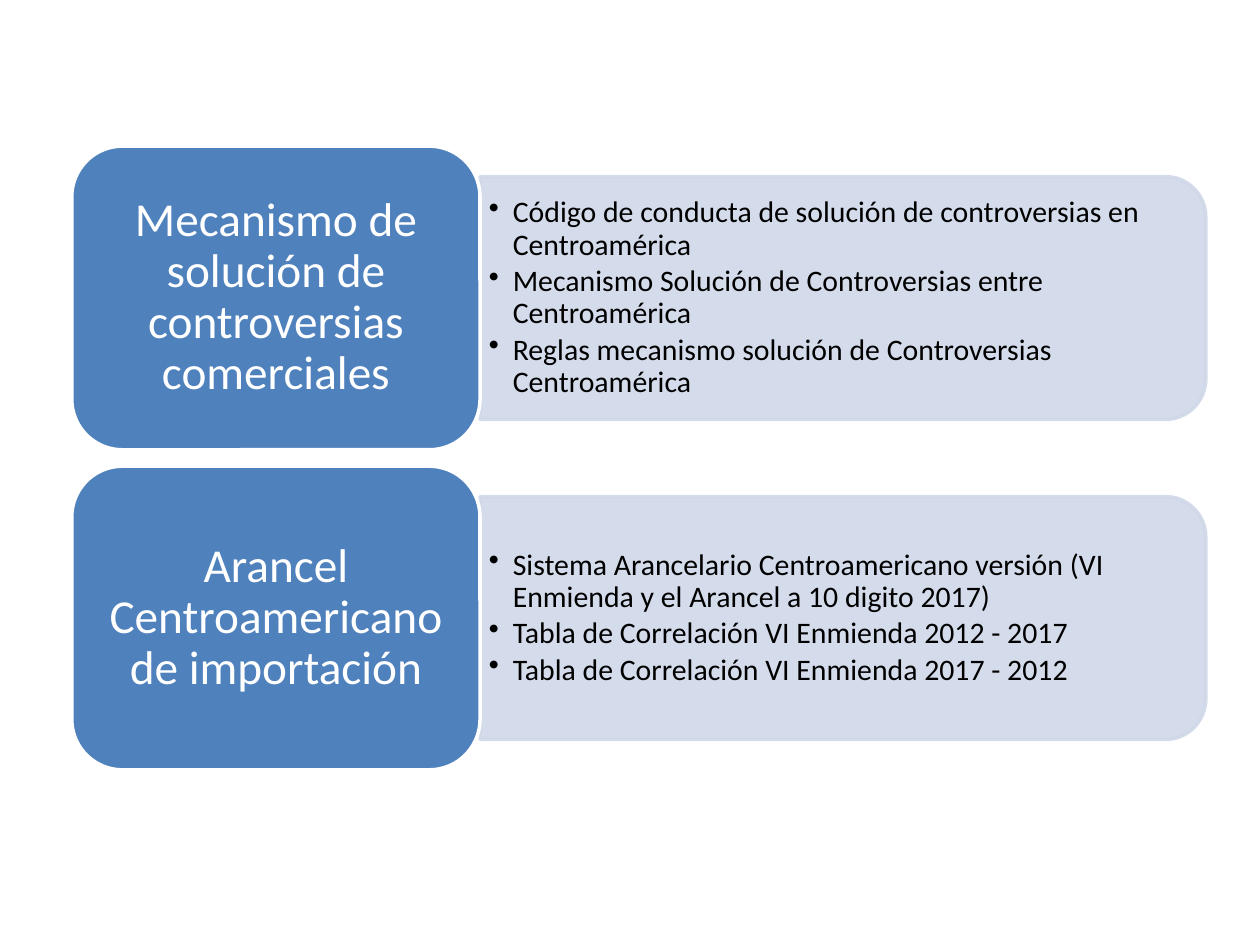
import pptx
import pptx.util
import pptx.dml.color
import pptx.enum.shapes
import pptx.enum.text
import pptx.oxml.ns
import lxml.etree

COLORS = {"heading": "4F81BD", "panel": "D0D8E8", "light": "FFFFFF", "text": "000000"}
FONT = "Calibri"
SLIDE_WIDTH, SLIDE_HEIGHT = 10, 7.5
LEFT, TOP, WIDTH = 0.57, 1.16, 9.0
ROW_HEIGHT, ROW_GAP = 2.41, 0.13
HEADING_SHARE, PANEL_SHARE, TEXT_SHARE = 0.36, 0.8, 0.72
BULLET_INDENT = 0.19

TOPICS = [
    ("Mecanismo de solución de controversias comerciales", [
        "Código de conducta de solución de controversias en Centroamérica",
        "Mecanismo Solución de Controversias entre Centroamérica",
        "Reglas mecanismo solución de Controversias Centroamérica",
    ]),
    ("Arancel Centroamericano de importación", [
        "Sistema Arancelario Centroamericano versión (VI Enmienda y el Arancel a 10 digito 2017) ",
        "Tabla de Correlación VI Enmienda 2012 - 2017",
        "Tabla de Correlación VI Enmienda 2017 - 2012",
    ]),
]


def color(name):
    return pptx.dml.color.RGBColor.from_string(COLORS[name])


def add_box(slide, kind, box, fill, line):
    shape = slide.shapes.add_shape(kind, *map(pptx.util.Inches, box))
    shape.shadow.inherit = False
    shape.fill.solid()
    shape.fill.fore_color.rgb = color(fill)
    shape.line.color.rgb = color(line)
    shape.line.width = pptx.util.Pt(2)
    return shape


def set_transparency(shape, opacity):
    tag = pptx.oxml.ns.qn("a:srgbClr")
    for element in shape.element.spPr.iter(tag):
        alpha = lxml.etree.SubElement(element, pptx.oxml.ns.qn("a:alpha"))
        alpha.set("val", str(opacity * 1000))


def prepare_frame(frame, horizontal, vertical):
    frame.word_wrap = True
    frame.vertical_anchor = pptx.enum.text.MSO_ANCHOR.MIDDLE
    frame.margin_left = frame.margin_right = pptx.util.Inches(horizontal)
    frame.margin_top = frame.margin_bottom = pptx.util.Inches(vertical)


def format_paragraph(paragraph, size, color_name, alignment):
    paragraph.alignment = alignment
    paragraph.line_spacing = 0.9
    for run in paragraph.runs:
        run.font.size = pptx.util.Pt(size)
        run.font.name = FONT
        run.font.color.rgb = color(color_name)


def add_bullet(paragraph):
    properties = paragraph._p.get_or_add_pPr()
    indent = pptx.util.Inches(BULLET_INDENT)
    properties.set("marL", str(indent))
    properties.set("indent", str(-indent))
    bullet = lxml.etree.SubElement(properties, pptx.oxml.ns.qn("a:buChar"))
    bullet.set("char", "•")


def add_panel(slide, left, top, width, height):
    box = (left + (width - height) / 2, top + (height - width) / 2, height, width)
    kind = pptx.enum.shapes.MSO_SHAPE.ROUND_2_SAME_RECTANGLE
    panel = add_box(slide, kind, box, "panel", "panel")
    panel.rotation = 90
    set_transparency(panel, 90)


def add_bullet_list(slide, items, left, top, width, height):
    box = map(pptx.util.Inches, (left, top, width, height))
    frame = slide.shapes.add_textbox(*box).text_frame
    prepare_frame(frame, 0.07, 0.04)
    frame.text = "\n".join(items)
    for paragraph in frame.paragraphs:
        format_paragraph(paragraph, 17, "text", pptx.enum.text.PP_ALIGN.LEFT)
        paragraph.space_after = pptx.util.Pt(2.5)
        paragraph.level = 1
        add_bullet(paragraph)


def add_heading(slide, text, box):
    kind = pptx.enum.shapes.MSO_SHAPE.ROUNDED_RECTANGLE
    frame = add_box(slide, kind, box, "heading", "light").text_frame
    prepare_frame(frame, 0.11, 0.06)
    frame.text = text
    format_paragraph(frame.paragraphs[0], 27, "light", pptx.enum.text.PP_ALIGN.CENTER)


def add_topic(slide, heading, items, left, top, width, height):
    heading_width = width * HEADING_SHARE
    panel_left = left + heading_width
    panel_width = width - heading_width
    panel_height = height * PANEL_SHARE
    text_height = height * TEXT_SHARE
    add_panel(slide, panel_left, top + (height - panel_height) / 2, panel_width, panel_height)
    add_bullet_list(slide, items, panel_left, top + (height - text_height) / 2,
                    panel_width - 0.09, text_height)
    add_heading(slide, heading, (left, top, heading_width, height))


def main():
    presentation = pptx.Presentation()
    presentation.slide_width = pptx.util.Inches(SLIDE_WIDTH)
    presentation.slide_height = pptx.util.Inches(SLIDE_HEIGHT)
    slide = presentation.slides.add_slide(presentation.slide_layouts[6])
    for row, (heading, items) in enumerate(TOPICS):
        top = TOP + row * (ROW_HEIGHT + ROW_GAP)
        add_topic(slide, heading, items, LEFT, top, WIDTH, ROW_HEIGHT)
    presentation.save("out.pptx")


if __name__ == "__main__":
    main()
